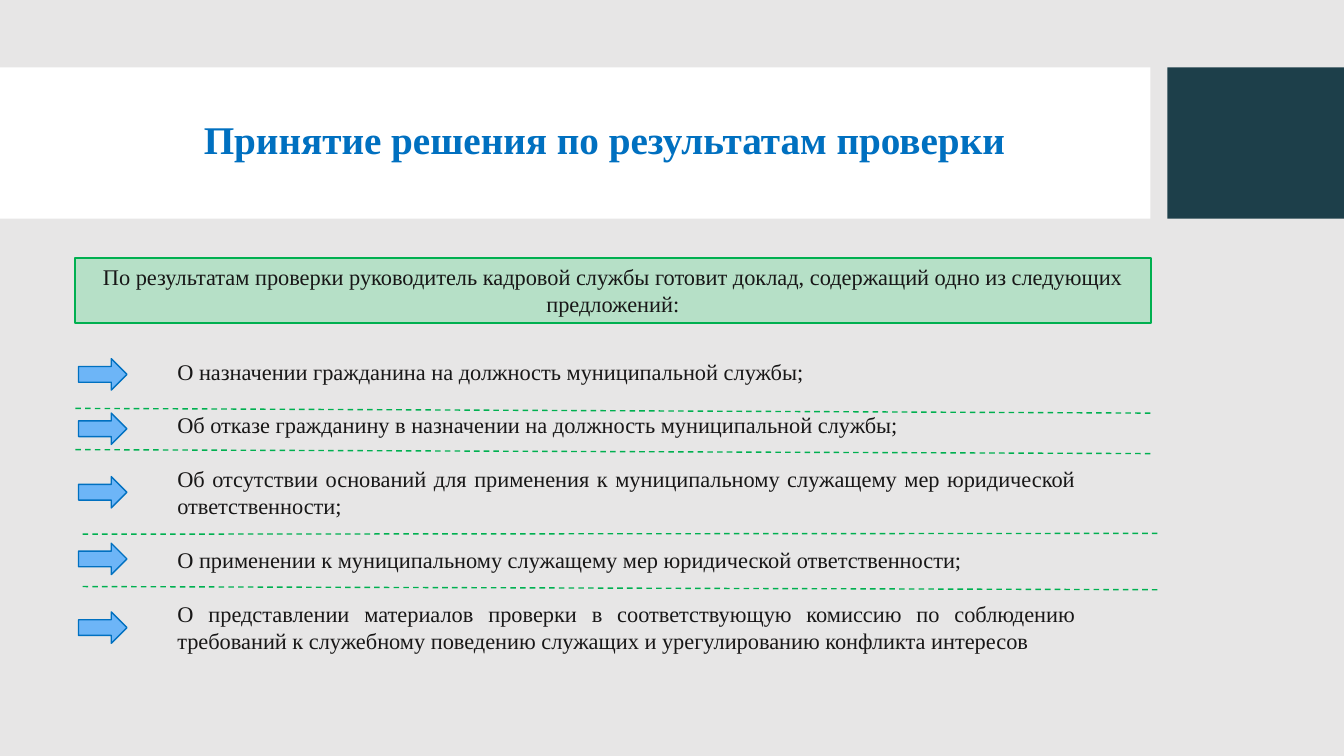
import pptx
import pptx.util
import pptx.dml.color
import pptx.enum.dml
import pptx.enum.shapes
import pptx.enum.text
import pptx.oxml

Cm = pptx.util.Cm
Pt = pptx.util.Pt
RGBColor = pptx.dml.color.RGBColor
Shapes = pptx.enum.shapes.MSO_SHAPE
Align = pptx.enum.text.PP_ALIGN
Anchor = pptx.enum.text.MSO_ANCHOR

FONT = "Times New Roman"
BACKGROUND = RGBColor(0xE7, 0xE6, 0xE6)
WHITE = RGBColor(0xFF, 0xFF, 0xFF)
DARK_TEAL = RGBColor(0x1D, 0x3F, 0x4A)
BLUE = RGBColor(0x00, 0x70, 0xC0)
LIGHT_BLUE = RGBColor(0x6D, 0xB5, 0xF7)
GREEN = RGBColor(0x00, 0xB0, 0x50)
LIGHT_GREEN = RGBColor(0xB6, 0xE0, 0xC7)
TEXT = RGBColor(0x18, 0x17, 0x17)

TITLE = "Принятие решения по результатам проверки"
INTRODUCTION = ("По результатам проверки руководитель кадровой службы готовит доклад, "
                "содержащий одно из следующих предложений:")
# Each proposal with the top of its arrow, in cm below the top of the list
PROPOSALS = [
    ("О назначении гражданина на должность муниципальной службы;", 0.15),
    ("Об отказе гражданину в назначении на должность муниципальной службы;", 1.52),
    ("Об отсутствии оснований для применения к муниципальному служащему мер "
     "юридической ответственности;", 3.12),
    ("О применении к муниципальному служащему мер юридической ответственности;", 4.8),
    ("О представлении материалов проверки в соответствующую комиссию по соблюдению "
     "требований к служебному поведению служащих и урегулированию конфликта интересов", 6.53),
]
# Left offset, start height and end height of each divider, in cm
DIVIDERS = [(0.02, 1.4, 1.52), (0.02, 2.44, 2.54), (0.2, 4.57, 4.55), (0.2, 5.89, 5.97)]


def add_block(slide, kind, box, fill, line=None, line_width=1):
    shape = slide.shapes.add_shape(kind, *map(Cm, box))
    shape.shadow.inherit = False
    shape.fill.solid()
    shape.fill.fore_color.rgb = fill
    if line is None:
        shape.line.fill.background()
    else:
        shape.line.color.rgb = line
        shape.line.width = Pt(line_width)
    return shape


def write(shape, texts, alignment, size, color, bold=False, anchor=Anchor.TOP, gap=0):
    frame = shape.text_frame
    frame.word_wrap = True
    frame.vertical_anchor = anchor
    for index, text in enumerate(texts):
        paragraph = frame.add_paragraph() if index else frame.paragraphs[0]
        paragraph.text = text
        paragraph.alignment = alignment
        if index and gap:
            paragraph.space_before = Pt(gap)
        paragraph.font.name = FONT
        paragraph.font.size = Pt(size)
        paragraph.font.bold = bold
        paragraph.font.color.rgb = color


def add_title_band(slide, box):
    left, top, width, height = box
    block_width, gap = 4.45, 0.43
    band_width = width - block_width - gap
    add_block(slide, Shapes.RECTANGLE, (left, top, band_width, height), WHITE)
    add_block(slide, Shapes.RECTANGLE,
              (left + band_width + gap, top, block_width, height), DARK_TEAL)
    title = slide.shapes.add_textbox(Cm(left + 1.88), Cm(top + 0.38), Cm(26.7), Cm(3))
    write(title, [TITLE], Align.CENTER, 28, BLUE, bold=True, anchor=Anchor.MIDDLE)
    title.text_frame.paragraphs[0].line_spacing = 0.9


def add_introduction(slide, box):
    panel = add_block(slide, Shapes.RECTANGLE, box, LIGHT_GREEN, GREEN, 1.5)
    write(panel, [INTRODUCTION], Align.CENTER, 16, TEXT)


def add_proposals(slide, box):
    left, top, width, height = box

    # Proposal texts, one line apart
    text_box = slide.shapes.add_textbox(Cm(left + 2.34), Cm(top), Cm(width - 3.99), Cm(height))
    write(text_box, [text for text, _ in PROPOSALS], Align.JUSTIFY, 16, TEXT, gap=19.3)

    # Arrows
    for _, offset in PROPOSALS:
        add_block(slide, Shapes.RIGHT_ARROW, (left + 0.1, top + offset, 1.22, 0.79),
                  LIGHT_BLUE, BLUE)

    # Dashed dividers
    for indent, start, end in DIVIDERS:
        divider = slide.shapes.add_connector(
            pptx.enum.shapes.MSO_CONNECTOR.STRAIGHT,
            Cm(left + indent), Cm(top + start), Cm(left + indent + width), Cm(top + end))
        divider.line.color.rgb = GREEN
        divider.line.width = Pt(1)
        divider.line.dash_style = pptx.enum.dml.MSO_LINE.DASH
        properties = divider._element.spPr
        properties.append(pptx.oxml.parse_xml(
            '<a:effectLst xmlns:a="http://schemas.openxmlformats.org/drawingml/2006/main"/>'))


def main():
    presentation = pptx.Presentation()
    presentation.slide_width = Cm(33.87)
    presentation.slide_height = Cm(19.05)
    slide = presentation.slides.add_slide(presentation.slide_layouts[6])
    slide.background.fill.solid()
    slide.background.fill.fore_color.rgb = BACKGROUND

    add_title_band(slide, (0, 1.7, 33.87, 3.81))
    add_introduction(slide, (1.88, 6.5, 27.13, 1.63))
    add_proposals(slide, (1.88, 8.89, 27.13, 7.77))
    presentation.save("out.pptx")


if __name__ == "__main__":
    main()
